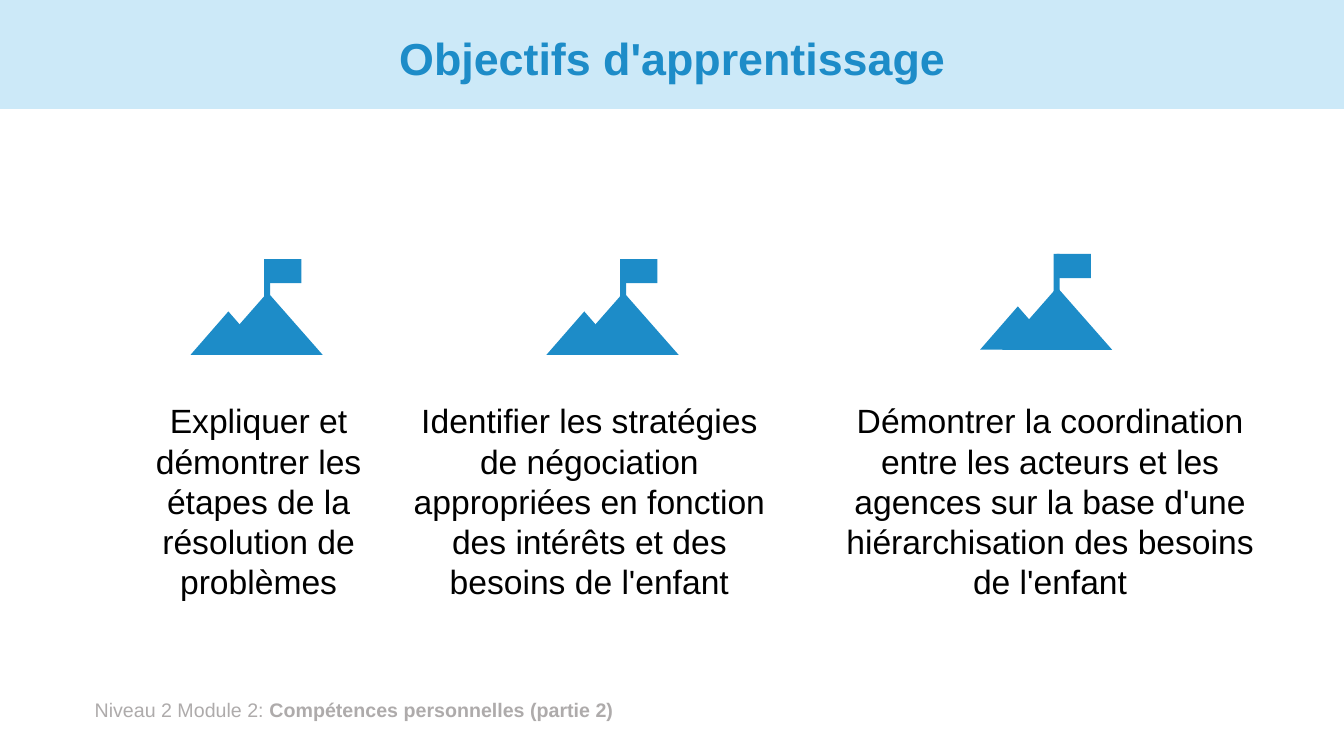
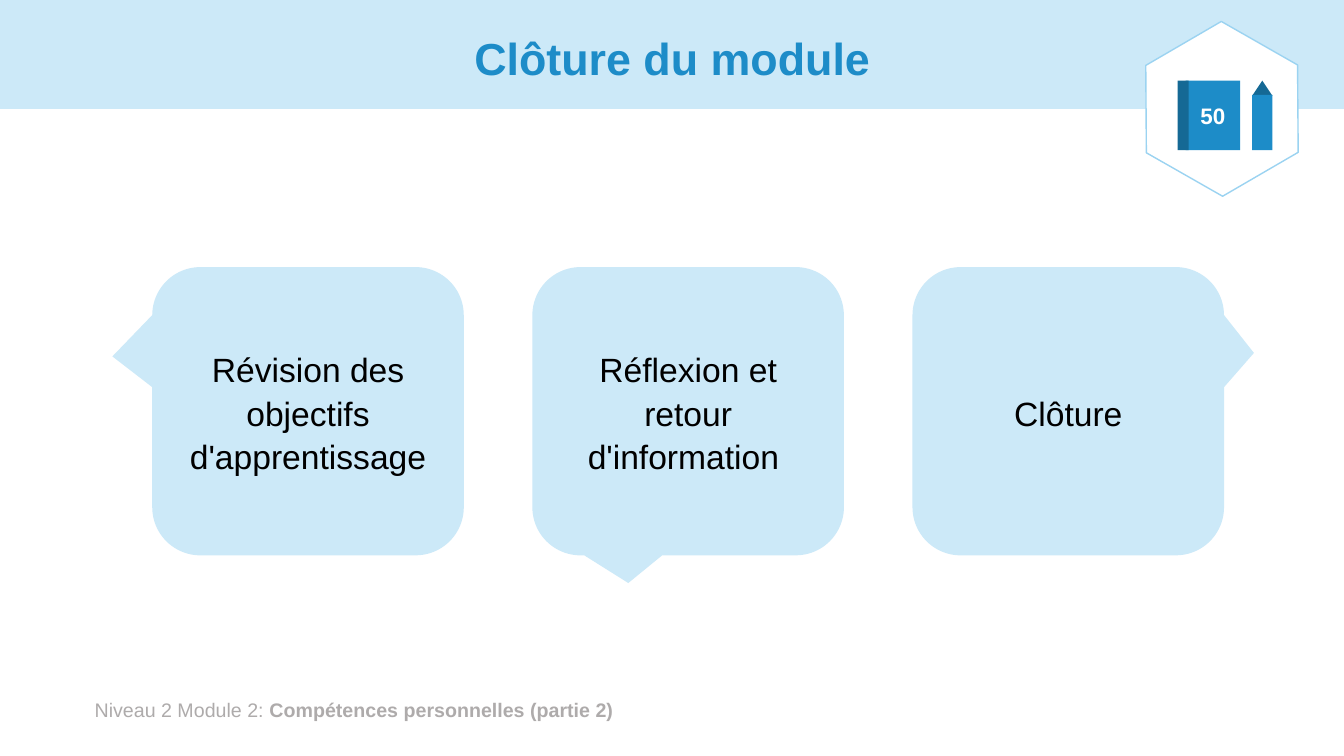
from dataclasses import dataclass

from pptx import Presentation
from pptx.dml.color import RGBColor
from pptx.enum.shapes import MSO_SHAPE as Preset
from pptx.enum.text import MSO_ANCHOR as Anchor, MSO_AUTO_SIZE as AutoSize, PP_ALIGN as Align
from pptx.util import Inches, Pt


@dataclass(frozen=True)
class Theme:
    """Colours, font and type sizes shared by the slides."""
    blue: str = "1D8CC8"
    dark_blue: str = "156995"
    pale_blue: str = "CCE9F8"
    outline: str = "9BD3F1"
    grey: str = "AEABAB"
    black: str = "000000"
    white: str = "FFFFFF"
    font: str = "Arial"
    title_size: int = 32
    body_size: int = 24
    badge_size: int = 16
    footer_size: int = 14


THEME = Theme()
WIDTH, HEIGHT = 13.33, 7.5
BAND_HEIGHT = 1.08

OBJECTIVES = [
    ("Expliquer et démontrer les étapes de la résolution de problèmes",
     (1.16, 3.92, 2.81, 2.12), (1.89, 2.57)),
    ("Identifier les stratégies de négociation appropriées en fonction "
     "des intérêts et des besoins de l'enfant",
     (3.97, 3.92, 3.75, 2.12), (5.42, 2.57)),
    ("Démontrer la coordination entre les acteurs et les agences sur la base "
     "d'une hiérarchisation des besoins de l'enfant",
     (8.23, 3.92, 4.37, 2.12), (9.72, 2.52)),
]

CLOSING_STEPS = [
    ("Révision des objectifs d'apprentissage", (-0.628, -0.19)),
    ("Réflexion et retour d'information ", (-0.192, 0.596)),
    ("Clôture", (0.596, -0.202)),
]


def lengths(box):
    """Turn a box of numbers into inches."""
    return [Inches(value) for value in box]


def color(value):
    """Turn a hexadecimal string into a colour."""
    return RGBColor.from_string(value)


def add_filled(shapes, preset, box, fill, line=None):
    """Add a flat preset shape, outlined only when a line colour is given."""
    shape = shapes.add_shape(preset, *lengths(box))
    shape.shadow.inherit = False
    shape.fill.solid()
    shape.fill.fore_color.rgb = color(fill)
    if line:
        shape.line.color.rgb = color(line)
        shape.line.width = Pt(1)
    else:
        shape.line.fill.background()
    return shape


def style_paragraph(paragraph, size, ink, bold=None, align=Align.CENTER, spacing=None):
    """Set the font and alignment of a paragraph."""
    paragraph.alignment = align
    paragraph.line_spacing = spacing
    font = paragraph.font
    font.name, font.size, font.bold = THEME.font, Pt(size), bold
    font.color.rgb = color(ink)


def write(shape, text, size, ink, anchor=Anchor.MIDDLE, **style):
    """Write one styled paragraph in a shape."""
    frame = shape.text_frame
    frame.text = text
    frame.word_wrap = True
    frame.auto_size = AutoSize.NONE
    frame.vertical_anchor = anchor
    style_paragraph(frame.paragraphs[0], size, ink, **style)


def add_footer(slide, box):
    """Add the module name at the foot of the slide."""
    frame = slide.shapes.add_textbox(*lengths(box)).text_frame
    frame.word_wrap = True
    paragraph = frame.paragraphs[0]
    style_paragraph(paragraph, THEME.footer_size, THEME.grey, align=Align.LEFT)
    paragraph.add_run().text = "Niveau 2 Module 2: "
    module = paragraph.add_run()
    module.text = "Compétences personnelles (partie 2)"
    module.font.bold = True


def add_titled_slide(presentation, title):
    """Add a slide with the shared band, title and footer."""
    slide = presentation.slides.add_slide(presentation.slide_layouts[5])
    band = add_filled(slide.shapes, Preset.RECTANGLE, (0, 0, WIDTH, BAND_HEIGHT), THEME.pale_blue)
    heading = slide.shapes.title
    heading.element.addprevious(band.element)
    heading.left, heading.top, heading.width, heading.height = lengths((0.92, 0.13, 11.5, 0.95))
    write(heading, title, THEME.title_size, THEME.blue, bold=True, spacing=0.9)
    add_footer(slide, (0.84, 6.87, 8.56, 0.34))
    return slide


def add_summit_icon(slide, left, top):
    """Draw two mountains with a flag from the given corner."""
    shapes = slide.shapes.add_group_shape().shapes
    for preset, x, y, width, height in (
        (Preset.RECTANGLE, 0.73, 0, 0.06, 0.4),
        (Preset.RECTANGLE, 0.76, 0, 0.34, 0.24),
        (Preset.ISOSCELES_TRIANGLE, 0.22, 0.33, 1.09, 0.62),
        (Preset.ISOSCELES_TRIANGLE, 0, 0.52, 0.75, 0.43),
    ):
        add_filled(shapes, preset, (left + x, top + y, width, height), THEME.blue)


def add_page_badge(slide, left, top, number):
    """Draw a hexagon holding a numbered book and a pencil."""
    shapes = slide.shapes.add_group_shape().shapes
    hexagon = add_filled(shapes, Preset.HEXAGON, (left, top, 1.74, 1.5), THEME.white, THEME.outline)
    hexagon.adjustments[0] = 0.29
    hexagon.adjustments[1] = 1.155
    hexagon.rotation = 29.7
    book = add_filled(shapes, Preset.RECTANGLE, (left + 0.51, top + 0.47, 0.54, 0.69), THEME.blue)
    write(book, number, THEME.badge_size, THEME.white, bold=True)
    for preset, x, y, width, height, fill in (
        (Preset.RECTANGLE, 0.43, 0.47, 0.11, 0.69, THEME.dark_blue),
        (Preset.ISOSCELES_TRIANGLE, 1.17, 0.47, 0.2, 0.15, THEME.dark_blue),
        (Preset.RECTANGLE, 1.17, 0.61, 0.2, 0.55, THEME.blue),
    ):
        add_filled(shapes, preset, (left + x, top + y, width, height), fill)


def add_callouts(slide, box, steps, gap):
    """Spread rounded callouts evenly across a box."""
    left, top, total, height = box
    width = (total - gap * (len(steps) - 1)) / len(steps)
    for index, (text, tip) in enumerate(steps):
        callout = add_filled(slide.shapes, Preset.ROUNDED_RECTANGULAR_CALLOUT,
                             (left + index * (width + gap), top, width, height), THEME.pale_blue)
        for position, value in enumerate((*tip, 0.167)):
            callout.adjustments[position] = value
        write(callout, text, THEME.body_size, THEME.black, spacing=1.07)


def build_objectives(presentation):
    """Build the slide of learning objectives."""
    slide = add_titled_slide(presentation, "Objectifs d'apprentissage")
    for text, box, icon_corner in OBJECTIVES:
        add_summit_icon(slide, *icon_corner)
        caption = slide.shapes.add_textbox(*lengths(box))
        write(caption, text, THEME.body_size, THEME.black, anchor=Anchor.TOP)


def build_closing(presentation):
    """Build the slide that closes the module."""
    slide = add_titled_slide(presentation, "Clôture du module")
    add_page_badge(slide, 11.25, 0.33, "50")
    add_callouts(slide, (1.51, 2.65, 10.63, 2.86), CLOSING_STEPS, 0.68)


def main():
    """Build and save the presentation."""
    presentation = Presentation()
    presentation.slide_width, presentation.slide_height = Inches(WIDTH), Inches(HEIGHT)
    build_objectives(presentation)
    build_closing(presentation)
    presentation.save("out.pptx")


if __name__ == "__main__":
    main()
